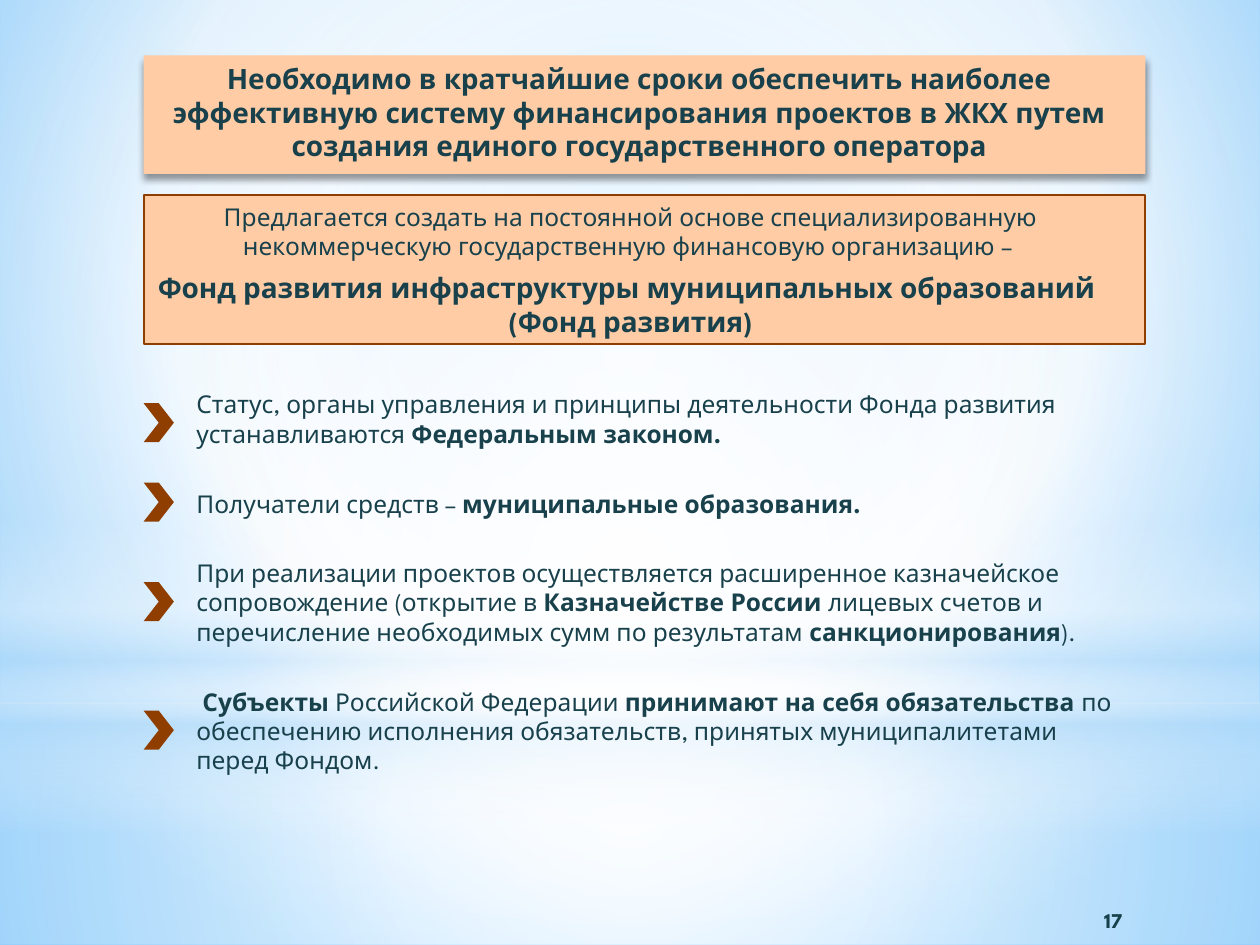
from dataclasses import dataclass

from lxml.etree import SubElement
from pptx import Presentation
from pptx.dml.color import RGBColor
from pptx.enum.shapes import MSO_SHAPE
from pptx.enum.text import MSO_ANCHOR, MSO_AUTO_SIZE, PP_ALIGN
from pptx.oxml import parse_xml
from pptx.oxml.ns import nsdecls, qn
from pptx.util import Inches, Pt


@dataclass(frozen=True)
class Theme:
    font: str = "League Spartan"
    ink: str = "18414C"
    peach: str = "FFCCA6"
    rust: str = "903E00"
    white: str = "FFFFFF"
    sky: str = "B4DCFA"
    edge: str = "9ED5FF"
    deep: str = "5BB9FF"
    body: int = 14
    head: int = 16
    page: int = 12


THEME = Theme()
MID = (50, 50, 50, 50)
LEFT, WIDE = 1.14, 7.95
TITLE = ("Необходимо в кратчайшие сроки обеспечить наиболее эффективную систему "
         "финансирования проектов в ЖКХ путем создания единого государственного оператора")
OFFER = ("Предлагается создать на постоянной основе специализированную "
         "некоммерческую государственную финансовую организацию – ")
FUND = "*Фонд развития инфраструктуры муниципальных образований "
SHORT = "*(Фонд развития)"
# Text top, text height, chevron top, words with bold parts between stars
POINTS = [
    (3.04, 0.57, 3.2, "Статус, органы управления и принципы деятельности Фонда "
     "развития устанавливаются *Федеральным законом."),
    (3.83, 0.34, 3.83, "Получатели средств – *муниципальные образования."),
    (4.38, 0.81, 4.62, "При реализации проектов осуществляется расширенное "
     "казначейское сопровождение (открытие в *Казначействе России *лицевых счетов "
     "и перечисление необходимых сумм по результатам *санкционирования*)."),
    (5.4, 0.81, 5.64, " *Субъекты* Российской Федерации *принимают на себя "
     "обязательства *по обеспечению исполнения обязательств, принятых "
     "муниципалитетами перед Фондом."),
]


def apply(item, form):
    for name, value in form.items():
        setattr(item, name, value)


def blend(root, stops, focus=None):
    """Swap the solid fill in root for a gradient: round if it has a focus, else downward."""
    marks = "".join(
        f'<a:gs pos="{pos * 1000}"><a:srgbClr val="{hue}">'
        f'<a:alpha val="{alpha * 1000}"/></a:srgbClr></a:gs>'
        for pos, hue, alpha in stops)
    if focus:
        sides = " ".join(f'{side}="{part * 1000}"' for side, part in zip("ltrb", focus))
        shade = f'<a:path path="circle"><a:fillToRect {sides}/></a:path>'
    else:
        shade = '<a:lin ang="5400000" scaled="0"/>'
    grad = parse_xml(f'<a:gradFill {nsdecls("a")} rotWithShape="1">'
                     f'<a:gsLst>{marks}</a:gsLst>{shade}</a:gradFill>')
    flat = root.find(qn("a:solidFill"))
    root.replace(flat, grad)


def add_form(slide, kind, box, fill, line=None):
    form = slide.shapes.add_shape(kind, *map(Inches, box))
    form.shadow.inherit = False
    form.fill.solid()
    form.fill.fore_color.rgb = RGBColor.from_string(fill)
    if line:
        form.line.color.rgb = RGBColor.from_string(line)
        form.line.width = Pt(1.25)
    else:
        form.line.fill.background()
    return form


def add_glow(slide, kind, box, stops, focus=None):
    form = add_form(slide, kind, box, THEME.white)
    blend(form.element.spPr, stops, focus)


def add_shade(form):
    effect = form.element.spPr.find(qn("a:effectLst"))
    cast = SubElement(effect, qn("a:outerShdw"), blurRad=str(Pt(4)), dist=str(Pt(3)),
                      dir="5400000", rotWithShape="0")
    hue = SubElement(cast, qn("a:srgbClr"), val="000000")
    SubElement(hue, qn("a:alpha"), val="40000")


def add_text(slide, box, lines, align=PP_ALIGN.LEFT, **frame):
    """Each line is (words, size, space after); a star switches bold on or off."""
    text = slide.shapes.add_textbox(*map(Inches, box)).text_frame
    apply(text, {"word_wrap": True, "auto_size": MSO_AUTO_SIZE.SHAPE_TO_FIT_TEXT, **frame})
    for row, (words, size, after) in enumerate(lines):
        para = text.add_paragraph() if row else text.paragraphs[0]
        apply(para, {"alignment": align, "space_after": Pt(after)})
        for turn, part in enumerate(words.split("*")):
            if part:
                run = para.add_run()
                run.text = part
                apply(run.font, {"name": THEME.font, "size": Pt(size), "bold": turn % 2 == 1})
                run.font.color.rgb = RGBColor.from_string(THEME.ink)


def add_scene(slide):
    white, sky = THEME.white, THEME.sky
    slide.background.fill.solid()
    blend(slide.element.find(".//" + qn("p:bgPr")),
          [(0, THEME.edge, 100), (60, white, 100), (100, THEME.deep, 100)], (20, 10, 20, 60))
    rect = MSO_SHAPE.RECTANGLE
    add_glow(slide, rect, (0, 5.58, 10, 1.92),
             [(0, white, 91), (37, white, 76), (100, sky, 79)], MID)
    add_glow(slide, rect, (0, 0, 10, 5.58),
             [(0, white, 89), (48, white, 62), (100, sky, 79)], MID)
    add_glow(slide, rect, (0, 4.12, 10, 2.5),
             [(0, white, 0), (29, white, 30), (45, sky, 40),
              (55, white, 26), (65, sky, 60), (100, white, 0)])
    add_glow(slide, MSO_SHAPE.OVAL, (0, 1.75, 10, 5.58),
             [(0, white, 100), (56, white, 0)], MID)


def add_point(slide, top, high, mark, words):
    add_text(slide, (1.46, top, 7.64, high), [(words, THEME.body, 6)])
    add_form(slide, MSO_SHAPE.CHEVRON, (LEFT, mark, 0.24, 0.31), THEME.rust)


def main():
    deck = Presentation()
    apply(deck, {"slide_width": Inches(10), "slide_height": Inches(7.5)})
    slide = deck.slides.add_slide(deck.slide_layouts[6])
    add_scene(slide)

    add_form(slide, MSO_SHAPE.RECTANGLE, (LEFT, 1.55, WIDE, 1.18), THEME.peach, THEME.rust)
    add_text(slide, (0.83, 1.55, 8.35, 1.19),
             [(OFFER, THEME.body, 6), (FUND, THEME.head, 0), (SHORT, THEME.head, 0)],
             PP_ALIGN.CENTER)
    for point in POINTS:
        add_point(slide, *point)
    add_text(slide, (7.67, 7.1, 2.33, 0.4), [("*17", THEME.page, 0)], PP_ALIGN.CENTER,
             auto_size=MSO_AUTO_SIZE.NONE, vertical_anchor=MSO_ANCHOR.MIDDLE)

    panel = add_form(slide, MSO_SHAPE.RECTANGLE, (LEFT, 0.44, WIDE, 0.94), THEME.peach)
    add_shade(panel)
    add_text(slide, (1.06, 0.44, 8.03, 0.91), [("*" + TITLE, THEME.head, 0)], PP_ALIGN.CENTER)
    deck.save("out.pptx")


if __name__ == "__main__":
    main()
